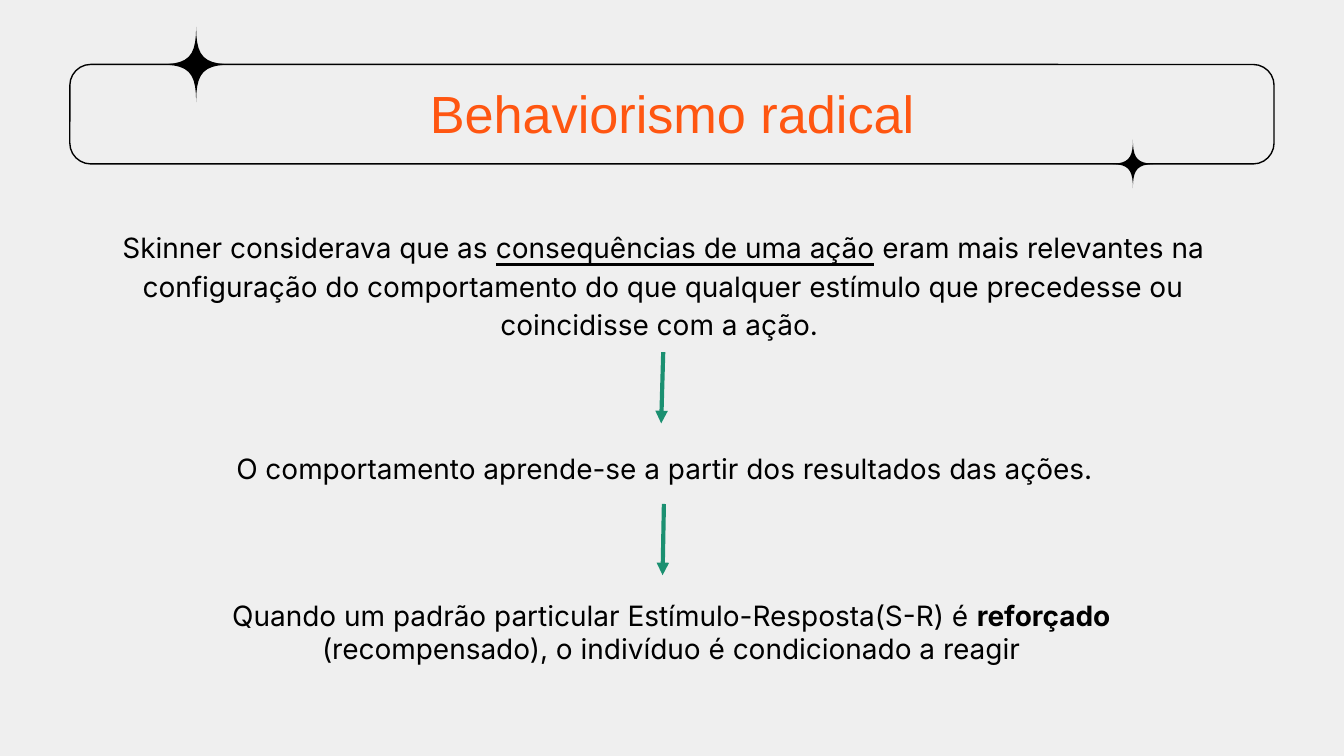
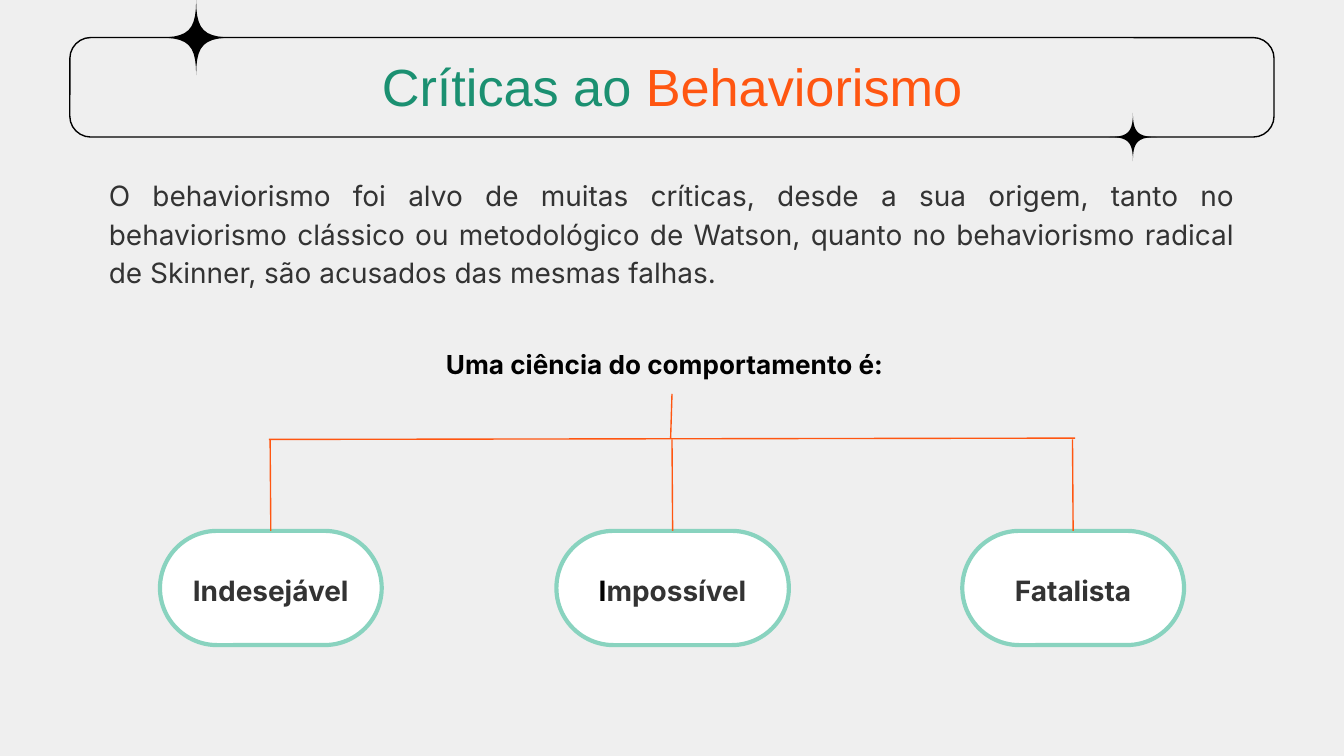
"""Build two slides on radical behaviorism and its critics."""
from dataclasses import dataclass, field
from typing import Any, NamedTuple

from lxml.etree import SubElement
from pptx import Presentation
from pptx.dml.color import RGBColor
from pptx.enum.shapes import MSO_CONNECTOR, MSO_SHAPE
from pptx.enum.text import MSO_ANCHOR, MSO_AUTO_SIZE, PP_ALIGN
from pptx.oxml.ns import qn
from pptx.util import Pt

PX = 9144
WIDE = 1000 * PX
HIGH = WIDE * 9 // 16
PAPER = RGBColor(0xEF, 0xEF, 0xEF)
WHITE = RGBColor(0xFF, 0xFF, 0xFF)
BLACK = RGBColor(0, 0, 0)
GRAY = RGBColor(0x33, 0x33, 0x33)
GREEN = RGBColor(0x1B, 0x90, 0x71)
MINT = RGBColor(0x89, 0xD3, 0xBF)
RUST = RGBColor(0xFF, 0x56, 0x11)

HEAD = {"name": "Arial", "size": Pt(28), "bold": False}
TEXT = {"name": "Inter", "size": Pt(15)}
BOLD = TEXT | {"bold": True}
INSET = {f"margin_{side}": 10 * PX for side in ("left", "top", "right", "bottom")}
STEPS = 10


class Box(NamedTuple):
    left: int
    top: int
    width: int
    height: int

    def emu(self) -> list[int]:
        return [n * PX for n in self]


class Run(NamedTuple):
    text: str
    color: RGBColor = BLACK
    form: dict[str, Any] = TEXT


@dataclass
class Note:
    box: Box
    runs: list[Run]
    form: dict[str, Any] = field(default_factory=dict)


@dataclass
class Wire:
    start: tuple[int, int]
    end: tuple[int, int]
    color: RGBColor = RUST
    width: float = 0.75
    arrow: bool = False
    above: Any = None
    below: Any = None


def style(thing: Any, form: dict[str, Any]) -> None:
    for key, value in form.items():
        setattr(thing, key, value)


def place(shape: Any, box: Box) -> None:
    style(shape, dict(zip(("left", "top", "width", "height"), box.emu())))


def write(shape: Any, runs: list[Run], form: dict[str, Any],
          size: MSO_AUTO_SIZE = MSO_AUTO_SIZE.NONE,
          anchor: MSO_ANCHOR = MSO_ANCHOR.MIDDLE) -> None:
    frame = shape.text_frame
    style(frame, INSET | {"word_wrap": True, "auto_size": size,
                          "vertical_anchor": anchor})
    para = frame.paragraphs[0]
    style(para, {"space_before": Pt(0)} | form)
    for item in runs:
        run = para.add_run()
        run.text = item.text
        style(run.font, item.form)
        run.font.color.rgb = item.color


def add_note(slide: Any, note: Note) -> Any:
    shape = slide.shapes.add_textbox(*note.box.emu())
    write(shape, note.runs, note.form, MSO_AUTO_SIZE.SHAPE_TO_FIT_TEXT, MSO_ANCHOR.TOP)
    return shape


def add_round(shapes: Any, box: Box, bend: float, color: RGBColor, width: float) -> Any:
    shape = shapes.add_shape(MSO_SHAPE.ROUNDED_RECTANGLE, *box.emu())
    shape.adjustments[0] = bend
    shape.shadow.inherit = False
    shape.fill.background()
    shape.line.color.rgb = color
    shape.line.width = Pt(width)
    return shape


def add_star(shapes: Any, x: int, y: int, size: int) -> None:
    curve = [t ** 3 + 0.6 * t ** 2 * (1 - t) for t in (n / STEPS for n in range(STEPS + 1))]
    arm = list(zip(curve, reversed(curve)))[:-1]
    points = []
    for _ in range(4):
        points += arm
        arm = [(b, -a) for a, b in arm]
    spots = [((x + size * a) * PX, (y - size * b) * PX) for a, b in points]
    form = shapes.build_freeform(*spots[0])
    form.add_line_segments(spots[1:], close=True)
    star = form.convert_to_shape()
    star.shadow.inherit = False
    star.fill.solid()
    star.fill.fore_color.rgb = BLACK
    star.line.fill.background()


def add_wire(slide: Any, wire: Wire) -> None:
    ends = [n * PX for n in wire.start + wire.end]
    line = slide.shapes.add_connector(MSO_CONNECTOR.STRAIGHT, *ends)
    if wire.above is not None:
        line.begin_connect(wire.above, 2)
    if wire.below is not None:
        line.end_connect(wire.below, 0)
    line.line.color.rgb = wire.color
    line.line.width = Pt(wire.width)
    props = line.element.spPr
    if wire.arrow:
        SubElement(props.find(qn("a:ln")), qn("a:tailEnd"), type="triangle")
    SubElement(props, qn("a:effectLst"))


def add_slide(deck: Any, layout: int, top: int, title: list[Run]) -> Any:
    slide = deck.slides.add_slide(deck.slide_layouts[layout])
    head = slide.shapes.title
    place(head, Box(78, top + 11, 844, 50))
    write(head, title, {"alignment": PP_ALIGN.CENTER})
    group = slide.shapes.add_group_shape().shapes
    add_round(group, Box(52, top, 896, 74), 0.21, BLACK, 0.75)
    add_star(group, 146, top, 28)
    add_star(group, 843, top + 74, 18)
    return slide


def add_theory(deck: Any) -> None:
    slide = add_slide(deck, 5, 48, [Run("Behaviorismo radical", RUST, HEAD)])
    notes = [
        Note(Box(78, 158, 831, 104), [
            Run("Skinner considerava que as "),
            Run("consequências de uma ação", form=TEXT | {"underline": True}),
            Run(" eram mais relevantes na configuração do comportamento do que "
                "qualquer estímulo que precedesse ou coincidisse com a ação. "),
        ], {"alignment": PP_ALIGN.CENTER, "line_spacing": 1.15}),
        Note(Box(166, 322, 667, 45), [
            Run("O comportamento aprende-se a partir dos resultados das ações."),
        ], {"alignment": PP_ALIGN.JUSTIFY, "line_spacing": 1.15}),
        Note(Box(84, 435, 831, 71), [
            Run("Quando um padrão particular Estímulo-Resposta(S-R) é "),
            Run("reforçado ", form=BOLD),
            Run("(recompensado), o indivíduo é condicionado a reagir"),
        ], {"alignment": PP_ALIGN.CENTER}),
    ]
    first, *_ = [add_note(slide, note) for note in notes]
    add_wire(slide, Wire((494, 262), (492, 315), GREEN, 2.25, True, above=first))
    add_wire(slide, Wire((494, 375), (493, 428), GREEN, 2.25, True))


def add_critics(deck: Any) -> None:
    slide = add_slide(deck, 1, 28, [Run("Críticas ao", GREEN, HEAD),
                                    Run(" Behaviorismo", RUST, HEAD)])
    body = slide.placeholders[1]
    place(body, Box(71, 119, 858, 104))
    props = body.text_frame.paragraphs[0]._p.get_or_add_pPr()
    for key in ("marL", "indent"):
        props.set(key, "0")
    SubElement(props, qn("a:buNone"))
    write(body, [Run(
        "O behaviorismo foi alvo de muitas críticas, desde a sua origem, tanto no "
        "behaviorismo clássico ou metodológico de Watson, quanto no behaviorismo "
        "radical de Skinner, são acusados das mesmas falhas.", GRAY)],
        {"alignment": PP_ALIGN.JUSTIFY, "line_spacing": 1.15}, anchor=MSO_ANCHOR.TOP)
    root = add_note(slide, Note(Box(322, 249, 356, 44), [
        Run("Uma ciência do comportamento é:", form=BOLD | {"size": Pt(14)})]))
    add_wire(slide, Wire((500, 293), (499, 326), above=root))
    add_wire(slide, Wire((200, 327), (800, 326)))
    pills = [
        (165, [Run("Indesejável", GRAY, BOLD)]),
        (173, [Run("I", BLACK, BOLD), Run("mpossível", GRAY, BOLD)]),
        (165, [Run("Fatalista", GRAY, BOLD)]),
    ]
    for n, (width, runs) in enumerate(pills):
        mid = (403 + 597 * n) // 2
        pill = add_round(slide.shapes, Box(mid - width // 2, 395, width, 85),
                         0.5, MINT, 2.25)
        pill.fill.solid()
        pill.fill.fore_color.rgb = WHITE
        write(pill, runs, {"alignment": PP_ALIGN.CENTER, "line_spacing": 1.15})
        add_wire(slide, Wire((mid, 327), (mid, 395), below=pill))


def main() -> None:
    deck = Presentation()
    style(deck, {"slide_width": WIDE, "slide_height": HIGH})
    fill = deck.slide_master.background.fill
    fill.solid()
    fill.fore_color.rgb = PAPER
    add_theory(deck)
    add_critics(deck)
    deck.save("out.pptx")


if __name__ == "__main__":
    main()
